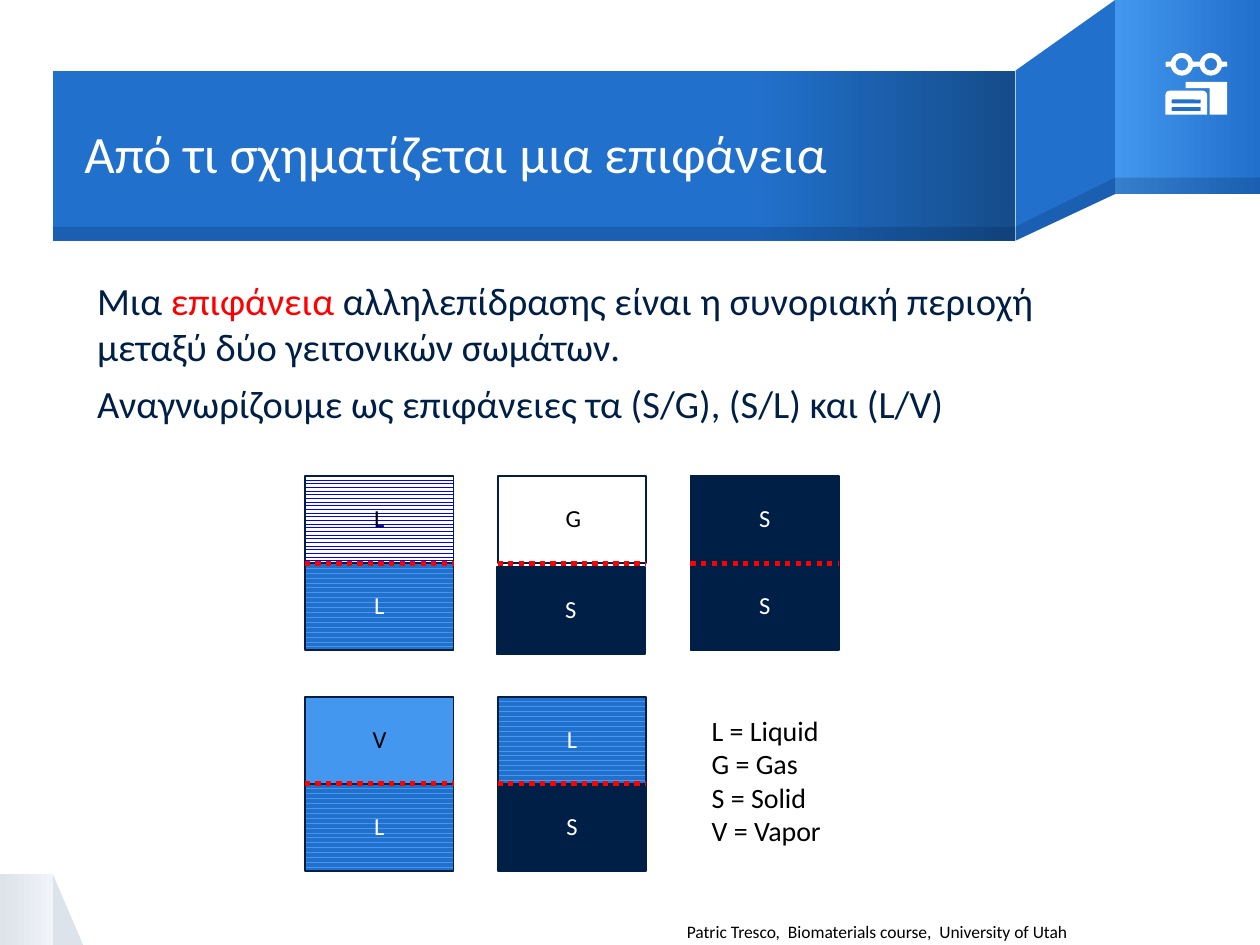
import collections
import lxml.etree
import pptx
import pptx.dml.color
import pptx.enum.dml
import pptx.enum.shapes
import pptx.enum.text
import pptx.oxml.ns
import pptx.util

Inches = pptx.util.Inches
Pt = pptx.util.Pt
qn = pptx.oxml.ns.qn
RGBColor = pptx.dml.color.RGBColor
SHAPE = pptx.enum.shapes.MSO_SHAPE
PATTERN = pptx.enum.dml.MSO_PATTERN
ALIGN = pptx.enum.text.PP_ALIGN
ANCHOR = pptx.enum.text.MSO_ANCHOR

NAVY = RGBColor(0x00, 0x1F, 0x46)
BLUE = RGBColor(0x21, 0x70, 0xCC)
DEEP_BLUE = RGBColor(0x15, 0x4C, 0x8A)
LIGHT_BLUE = RGBColor(0x43, 0x97, 0xEE)
PURE_BLUE = RGBColor(0x00, 0x00, 0xFF)
GREY = RGBColor(0xDD, 0xE3, 0xEB)
PALE_GREY = RGBColor(0xF0, 0xF3, 0xF7)
RED = RGBColor(0xFF, 0x00, 0x00)
WHITE = RGBColor(0xFF, 0xFF, 0xFF)
BLACK = RGBColor(0x00, 0x00, 0x00)
FONT = "Calibri"

Box = collections.namedtuple("Box", "left top width height")
Matter = collections.namedtuple("Matter", "letter fore back pattern text_color")

LIQUID = Matter("L", LIGHT_BLUE, BLUE, PATTERN.WAVE, WHITE)
OTHER_LIQUID = Matter("L", PURE_BLUE, WHITE, PATTERN.ZIG_ZAG, BLACK)
GAS = Matter("G", WHITE, None, None, BLACK)
SOLID = Matter("S", NAVY, None, None, WHITE)
VAPOR = Matter("V", LIGHT_BLUE, None, None, BLACK)


def emu(box):
    return [Inches(length) for length in box]


def paint(shape, color, alpha=None):
    shape.shadow.inherit = False
    shape.line.fill.background()
    shape.fill.solid()
    shape.fill.fore_color.rgb = color
    if alpha is not None:
        tone = shape.element.spPr.find(qn("a:solidFill"))[0]
        lxml.etree.SubElement(tone, qn("a:alpha")).set("val", str(alpha * 1000))


def add_block(page, box, color, kind=SHAPE.RECTANGLE, alpha=None):
    block = page.shapes.add_shape(kind, *emu(box))
    paint(block, color, alpha)
    return block


def add_gradient_block(page, box, stops):
    block = add_block(page, box, stops[0][1])
    block.fill.gradient()
    gradient = block.element.spPr.find(qn("a:gradFill"))
    gradient.find(qn("a:lin")).set("ang", "0")
    stop_list = gradient.find(qn("a:gsLst"))
    for old_stop in list(stop_list):
        stop_list.remove(old_stop)
    for position, color in stops:
        stop = lxml.etree.SubElement(stop_list, qn("a:gs"))
        stop.set("pos", str(position * 1000))
        lxml.etree.SubElement(stop, qn("a:srgbClr")).set("val", str(color))


def add_outline(page, points, color, alpha=None):
    corners = [(Inches(x), Inches(y)) for x, y in points]
    builder = page.shapes.build_freeform(*corners[0])
    builder.add_line_segments(corners[1:], close=True)
    paint(builder.convert_to_shape(), color, alpha)


def add_span(para, words, size, color):
    span = para.add_run()
    span.text = words
    span.font.name = FONT
    span.font.size = Pt(size)
    span.font.color.rgb = color


def add_text(page, box, lines, size, color, align=ALIGN.LEFT, wrap=False):
    frame = page.shapes.add_textbox(*emu(box)).text_frame
    frame.word_wrap = wrap
    for index, words in enumerate(lines):
        para = frame.add_paragraph() if index else frame.paragraphs[0]
        para.alignment = align
        add_span(para, words, size, color)


def add_corner(page, box):
    fold = 0.24
    flat = box.width - fold
    add_block(page, Box(box.left + flat, box.top, fold, box.height), GREY, SHAPE.RIGHT_TRIANGLE)
    add_gradient_block(page, Box(box.left, box.top, flat, box.height), [(0, GREY), (100, PALE_GREY)])


def add_ribbon(page, box):
    front_right, back_left = 8.06, 8.85
    front_top, front_edge, front_bottom = 0.56, 1.8, box.top + box.height
    back_edge, back_bottom = 1.41, 1.54
    front_width = front_right - box.left
    back_width = box.left + box.width - back_left
    add_outline(page, [(back_left, box.top), (front_right, front_top),
                       (front_right, front_bottom), (back_left, back_bottom)], BLUE)
    add_gradient_block(page, Box(back_left, box.top, back_width, back_bottom - box.top),
                       [(0, LIGHT_BLUE), (100, BLUE)])
    add_gradient_block(page, Box(box.left, front_top, front_width, front_bottom - front_top),
                       [(0, BLUE), (73, BLUE), (100, DEEP_BLUE)])
    add_outline(page, [(back_left, back_edge), (front_right, front_edge),
                       (front_right, front_bottom), (back_left, back_bottom)], NAVY, 20)
    add_block(page, Box(back_left, back_edge, back_width, back_bottom - back_edge), NAVY, alpha=20)
    add_block(page, Box(box.left, front_edge, front_width, front_bottom - front_edge), NAVY, alpha=20)


def add_reading_icon(page, box):
    left, top, right, bottom = box.left, box.top, box.left + box.width, box.top + box.height
    for offset in (0.04, 0.27):
        lens = add_block(page, Box(left + offset, top, 0.18, 0.18), WHITE, SHAPE.DONUT)
        lens.adjustments[0] = 0.22
    for offset, width in ((0, 0.05), (0.21, 0.07), (0.44, 0.05)):
        add_block(page, Box(left + offset, top + 0.07, width, 0.04), WHITE, SHAPE.ROUNDED_RECTANGLE)
    add_outline(page, [(left + 0.16, top + 0.23), (right, top + 0.23), (right, bottom),
                       (left + 0.35, bottom), (left + 0.35, top + 0.28),
                       (left + 0.16, top + 0.28)], WHITE)
    add_block(page, Box(left, top + 0.3, 0.33, 0.19), WHITE, SHAPE.ROUND_2_SAME_RECTANGLE)
    for offset in (0.37, 0.43):
        add_block(page, Box(left + 0.05, top + offset, 0.23, 0.03), BLUE, SHAPE.ROUNDED_RECTANGLE)


def place_placeholder(holder, box):
    holder.left, holder.top, holder.width, holder.height = emu(box)
    holder.element.getparent().append(holder.element)
    frame = holder.text_frame
    frame.margin_left = frame.margin_top = frame.margin_right = frame.margin_bottom = 0
    frame.word_wrap = True
    frame.auto_size = pptx.enum.text.MSO_AUTO_SIZE.NONE
    return frame


def add_title(page, box):
    frame = place_placeholder(page.shapes.title, box)
    frame.vertical_anchor = ANCHOR.MIDDLE
    para = frame.paragraphs[0]
    para.alignment = ALIGN.LEFT
    para.line_spacing = 0.9
    add_span(para, "Από τι σχηματίζεται μια επιφάνεια", 30, WHITE)


def add_body(page, box):
    frame = place_placeholder(page.placeholders[1], box)
    paragraphs = [
        [("Μια ", NAVY), ("επιφάνεια", RED),
         (" αλληλεπίδρασης είναι η συνοριακή περιοχή μεταξύ δύο γειτονικών σωμάτων.", NAVY)],
        [("Aναγνωρίζουμε ως επιφάνειες τα (S/G), (S/L) και (L/V)", NAVY)],
    ]
    for index, spans in enumerate(paragraphs):
        para = frame.add_paragraph() if index else frame.paragraphs[0]
        para.space_before = Pt(6)
        properties = para._p.get_or_add_pPr()
        properties.set("marL", str(Inches(0.1)))
        properties.set("indent", "0")
        lxml.etree.SubElement(properties, qn("a:buNone"))
        for words, color in spans:
            add_span(para, words, 22, color)


def add_matter(page, box, matter):
    cell = add_block(page, box, matter.fore)
    if matter.pattern is not None:
        cell.fill.patterned()
        cell.fill.pattern = matter.pattern
        cell.fill.fore_color.rgb = matter.fore
        cell.fill.back_color.rgb = matter.back
    cell.line.color.rgb = NAVY
    cell.line.width = Pt(1)
    width, height = 0.3, 0.34
    label = Box(box.left + (box.width - width) / 2, box.top + (box.height - height) / 2 - 0.01,
                width, height)
    add_text(page, label, [matter.letter], 14, matter.text_color, ALIGN.CENTER)


def add_interface(page, box, upper, lower, shift=(0, 0)):
    half = box.height / 2
    middle = box.top + half
    add_matter(page, Box(box.left + shift[0], middle + shift[1], box.width, half), lower)
    add_matter(page, Box(box.left, box.top, box.width, half), upper)
    border = page.shapes.add_connector(pptx.enum.shapes.MSO_CONNECTOR.STRAIGHT, Inches(box.left),
                                       Inches(middle), Inches(box.left + box.width), Inches(middle))
    border.line.color.rgb = RED
    border.line.width = Pt(3)
    border.line.dash_style = pptx.enum.dml.MSO_LINE.ROUND_DOT
    lxml.etree.SubElement(border.element.spPr, qn("a:effectLst"))


def add_diagram(page, box):
    column_step, row_step, width, height = 1.53, 1.75, 1.18, 1.38
    rows = [
        [(OTHER_LIQUID, LIQUID), (GAS, SOLID, (-0.01, 0.03)), (SOLID, SOLID)],
        [(VAPOR, LIQUID), (LIQUID, SOLID)],
    ]
    for row, pairs in enumerate(rows):
        for column, pair in enumerate(pairs):
            place = Box(box.left + column * column_step, box.top + row * row_step, width, height)
            add_interface(page, place, *pair)
    legend = Box(box.left + 3.13, box.top + 1.83, 1.09, 1.18)
    add_text(page, legend, ["L = Liquid", "G = Gas", "S = Solid", "V = Vapor"], 16, BLACK)


def main():
    deck = pptx.Presentation()
    deck.slide_width, deck.slide_height = Inches(10), Inches(7.5)
    page = deck.slides.add_slide(deck.slide_layouts[1])
    add_corner(page, Box(0, 6.94, 0.66, 0.56))
    add_ribbon(page, Box(0.42, 0, 9.58, 1.91))
    add_title(page, Box(0.67, 0.57, 7.39, 1.34))
    add_body(page, Box(0.67, 2.2, 8.01, 3.96))
    add_reading_icon(page, Box(9.25, 0.42, 0.49, 0.49))
    add_diagram(page, Box(2.42, 3.78, 4.25, 3.13))
    add_text(page, Box(4.46, 7.26, 5, 0.27),
             ["Patric Tresco,  Biomaterials course,  University of Utah"], 10, BLACK, ALIGN.CENTER, True)
    deck.save("out.pptx")


if __name__ == "__main__":
    main()
